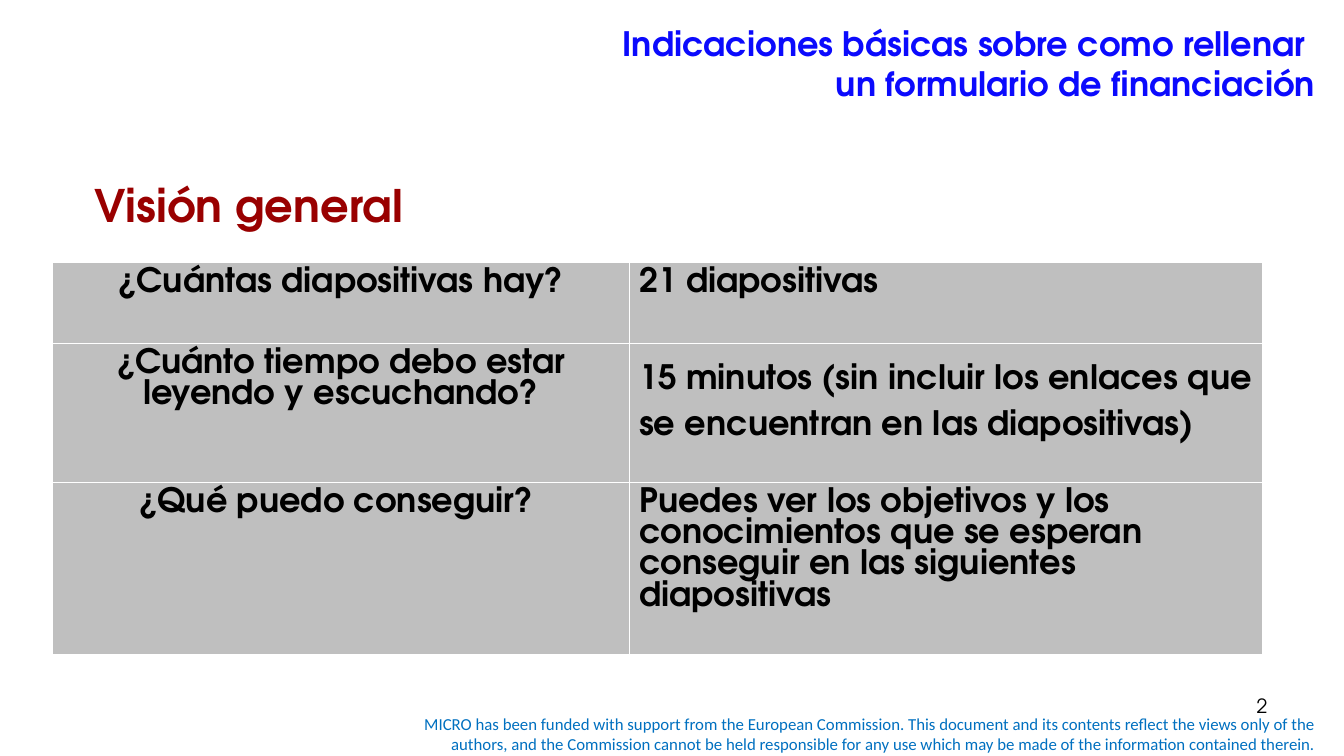
from lxml import etree
from pptx import Presentation
from pptx.dml.color import RGBColor
from pptx.enum.text import MSO_ANCHOR, PP_ALIGN
from pptx.oxml.ns import qn
from pptx.util import Inches, Pt

LEFT, CENTER, RIGHT = PP_ALIGN.LEFT, PP_ALIGN.CENTER, PP_ALIGN.RIGHT
TOP, MIDDLE = MSO_ANCHOR.TOP, MSO_ANCHOR.MIDDLE
BLACK = RGBColor(0x00, 0x00, 0x00)
WHITE = RGBColor(0xFF, 0xFF, 0xFF)
GREY = RGBColor(0xBF, 0xBF, 0xBF)
BLUE = RGBColor(0x0B, 0x0A, 0xFD)
RED = RGBColor(0x99, 0x00, 0x00)
FOOTER_BLUE = RGBColor(0x00, 0x70, 0xC0)
HEADING_FONT, FOOTER_FONT = "TeX Gyre Adventor", "Calibri"
TITLE_ONLY = 5
WIDTH, HEIGHT = Inches(13.33), Inches(7.5)
COLUMNS, ROWS = (5.72, 6.28), (0.81, 1.38, 1.7)
OVERVIEW = (
    ("¿Cuántas diapositivas hay?", "21 diapositivas", 1.0),
    ("¿Cuánto tiempo debo estar leyendo y escuchando?",
     "15 minutos (sin incluir los enlaces que se encuentran en las diapositivas)", 1.5),
    ("¿Qué puedo conseguir? ",
     "Puedes ver los objetivos y los conocimientos que se esperan conseguir "
     "en las siguientes diapositivas", 1.0),
)
FUNDING = (
    "MICRO has been funded with support from the European Commission. This document "
    "and its contents reflect the views only of the authors, and the Commission cannot "
    "be held responsible for any use which may be made of the information contained therein."
)


def write(frame, text, size, color, align=LEFT, bold=True, font=HEADING_FONT, spacing=1.0):
    """Put one formatted paragraph into a text frame."""
    frame.text = text
    frame.word_wrap = True
    para = frame.paragraphs[0]
    para.alignment = align
    para.line_spacing = spacing
    for span in para.runs:
        span.font.name = font
        span.font.size = Pt(size)
        span.font.bold = bold
        span.font.color.rgb = color


def place(shape, left, top, width, height):
    """Position a shape in inches."""
    shape.left, shape.top = Inches(left), Inches(top)
    shape.width, shape.height = Inches(width), Inches(height)


def add_title(slide, text):
    """Move the title placeholder to the top right and fill it."""
    title = slide.shapes.title
    place(title, 1.14, 0, 12, 1.25)
    title.text_frame.vertical_anchor = MIDDLE
    write(title.text_frame, text, 24, BLUE, RIGHT)


def add_label(slide, area, text, size, color, anchor=TOP, **style):
    """Add a wrapped text box."""
    box = slide.shapes.add_textbox(*(Inches(length) for length in area))
    box.text_frame.vertical_anchor = anchor
    write(box.text_frame, text, size, color, **style)


def add_borders(cell):
    """Draw a thin white line on each side of a cell."""
    properties = cell._tc.get_or_add_tcPr()
    for position, side in enumerate(("lnL", "lnR", "lnT", "lnB")):
        line = etree.Element(qn(f"a:{side}"), w=str(Pt(1)))
        fill = etree.SubElement(line, qn("a:solidFill"))
        etree.SubElement(fill, qn("a:srgbClr"), val=str(WHITE))
        properties.insert(position, line)


def fill_cell(cell, text, align, spacing):
    """Fill and border one table cell."""
    cell.fill.solid()
    cell.fill.fore_color.rgb = GREY
    add_borders(cell)
    write(cell.text_frame, text, 24, BLACK, align, spacing=spacing)


def add_overview(slide):
    """Add the table of questions and answers."""
    frame = slide.shapes.add_table(len(ROWS), len(COLUMNS), Inches(0.52), Inches(2.6),
                                   Inches(sum(COLUMNS)), Inches(sum(ROWS)))
    table = frame.table
    for column, width in zip(table.columns, COLUMNS):
        column.width = Inches(width)
    for row, height, (question, answer, spacing) in zip(table.rows, ROWS, OVERVIEW):
        row.height = Inches(height)
        fill_cell(row.cells[0], question, CENTER, 1.0)
        fill_cell(row.cells[1], answer, LEFT, spacing)


def main():
    """Build and save the slide."""
    deck = Presentation()
    deck.slide_width, deck.slide_height = WIDTH, HEIGHT
    slide = deck.slides.add_slide(deck.slide_layouts[TITLE_ONLY])
    add_label(slide, (3.75, 7.03, 9.4, 0.5), FUNDING, 12, FOOTER_BLUE, MIDDLE,
              align=RIGHT, bold=False, font=FOOTER_FONT)
    add_overview(slide)
    add_label(slide, (9.56, 6.83, 3.11, 0.52), "2", 14, BLACK, align=RIGHT, bold=False)
    add_label(slide, (0.84, 1.71, 4.1, 0.64), "Visión general", 32, RED)
    add_title(slide, "Indicaciones básicas sobre como rellenar \vun formulario de financiación")
    deck.save("out.pptx")


if __name__ == "__main__":
    main()
